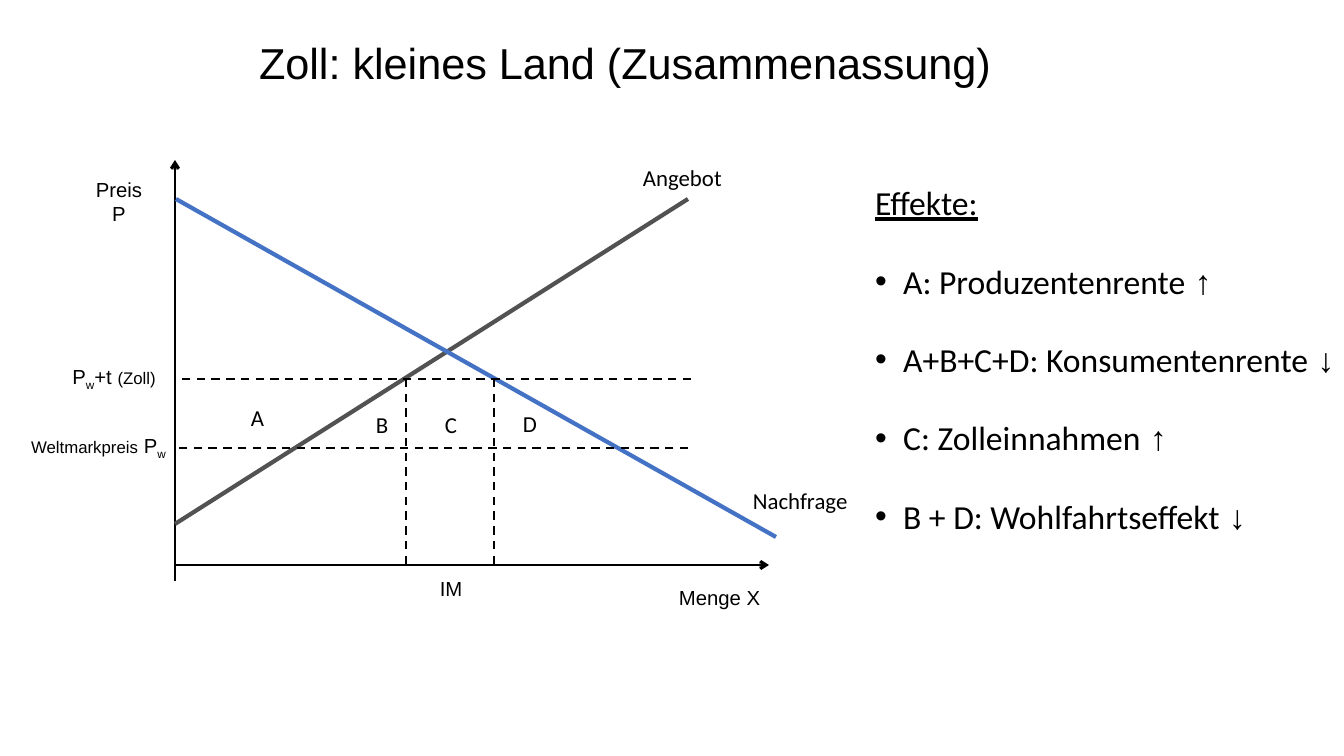
from lxml.etree import SubElement
from pptx import Presentation
from pptx.dml.color import RGBColor
from pptx.enum.dml import MSO_LINE
from pptx.enum.shapes import MSO_CONNECTOR
from pptx.enum.text import MSO_ANCHOR, MSO_AUTO_SIZE, PP_ALIGN
from pptx.oxml.ns import qn
from pptx.util import Pt

PX = 914400 / 100.8
BLACK = RGBColor(0x00, 0x00, 0x00)
GREY = RGBColor(0x52, 0x52, 0x52)
BLUE = RGBColor(0x44, 0x72, 0xC4)
LEFT, CENTER = PP_ALIGN.LEFT, PP_ALIGN.CENTER


def place(box, left, top, width, height):
    bounds = {"left": left, "top": top, "width": width, "height": height}
    for name, value in bounds.items():
        setattr(box, name, round(value * PX))


def add_span(para, text, font, size, **extra):
    span = para.add_run()
    span.text = text
    span.font.color.rgb = BLACK
    for name, value in {"name": font, "size": Pt(size), **extra}.items():
        setattr(span.font, name, value)
    return span


deck = Presentation()
deck.slide_width, deck.slide_height = round(1344 * PX), round(756 * PX)
page = deck.slides.add_slide(deck.slide_layouts[5 - 4])

# Title
title = page.shapes.title
place(title, 214, 27, 822, 71)
title.text_frame.auto_size = MSO_AUTO_SIZE.NONE
title.text_frame.paragraphs[0].alignment = CENTER
add_span(title.text_frame.paragraphs[0], "Zoll: kleines Land (Zusammenassung)", "Arial", 30.9)

# List of effects
effects = page.placeholders[1]
place(effects, 865, 177, 483, 458)
frame_format = {"auto_size": MSO_AUTO_SIZE.NONE, "vertical_anchor": MSO_ANCHOR.TOP,
                "word_wrap": True, "margin_right": 0}
for name, value in frame_format.items():
    setattr(effects.text_frame, name, value)
heading = effects.text_frame.paragraphs[0]
heading.space_before = Pt(0)
heading_format = heading._p.get_or_add_pPr()
heading_format.set("marL", "0")
heading_format.set("indent", "0")
SubElement(heading_format, qn("a:buNone"))
add_span(heading, "Effekte:", "Calibri", 24, underline=True)

for effect, arrow in [("A: Produzentenrente ", "↑"), ("A+B+C+D: Konsumentenrente ", "↓"),
                      ("C: Zolleinnahmen ", "↑"), ("B + D: Wohlfahrtseffekt ", "↓")]:
    para = effects.text_frame.add_paragraph()
    para.space_before = Pt(27.2)
    para_format = para._p.get_or_add_pPr()
    para_format.set("marL", str(round(28 * PX)))
    para_format.set("indent", str(round(-28 * PX)))
    SubElement(para_format, qn("a:buChar"), char="•")
    add_span(para, effect, "Calibri", 24)
    add_span(para, arrow, "Courier New", 24)

# Diagram lines: start x, start y, end x, end y, colour, width, kind
diagram = page.shapes.add_group_shape().shapes
AXIS_X, AXIS_Y = 175, 565
TARIFF_Y, WORLD_Y = 379, 448
lines = [
    (AXIS_X, 581, AXIS_X, 160, BLACK, 2, "arrow"),
    (AXIS_X, AXIS_Y, 769, AXIS_Y, BLACK, 2, "arrow"),
    (AXIS_X, 524, 688, 199, GREY, 3, "solid"),
    (176, 199, 776, 537, BLUE, 3, "solid"),
    (688, WORLD_Y, AXIS_X, WORLD_Y, BLACK, 1.5, "dash"),
    (691, TARIFF_Y, 178, TARIFF_Y, BLACK, 1.5, "dash"),
    (406, TARIFF_Y, 406, AXIS_Y, BLACK, 1.5, "dash"),
    (494, TARIFF_Y, 494, AXIS_Y, BLACK, 1.5, "dash"),
]
for *ends, color, width, kind in lines:
    connector = diagram.add_connector(MSO_CONNECTOR.STRAIGHT, *[round(end * PX) for end in ends])
    connector.line.color.rgb = color
    connector.line.width = Pt(width)
    if kind == "dash":
        connector.line.dash_style = MSO_LINE.DASH
    elif kind == "arrow":
        SubElement(connector.line._get_or_add_ln(), qn("a:tailEnd"), type="arrow")
    SubElement(connector._element.spPr, qn("a:effectLst"))

# Diagram labels: bounds, alignment, font, paragraphs of (text, size, baseline)
labels = [
    (85, 172, 68, 56, CENTER, "Arial", [[("Preis", 14.5, 0)], [("P", 14.5, 0)]]),
    (669, 580, 103, 35, LEFT, "Arial", [[("Menge X", 14.5, 0)]]),
    (430, 571, 43, 35, LEFT, "Arial", [[("IM", 14.5, 0)]]),
    (11, 428, 175, 34, CENTER, "Arial",
     [[("Weltmarkpreis", 12, 0), (" P", 14.5, 0), ("w", 14.5, -25000)]]),
    (60, 359, 108, 34, CENTER, "Arial",
     [[("P", 14.5, 0), ("w", 14.5, -25000), ("+t ", 14.5, 0), ("(Zoll)", 12, 0)]]),
]
for left, top, width, text in [(743, 482, 118, "Nachfrage"), (633, 159, 102, "Angebot"),
                               (241, 399, 34, "A"), (366, 406, 34, "B"),
                               (435, 406, 34, "C"), (513, 405, 35, "D")]:
    labels.append((left, top, width, 36, LEFT, "Calibri", [[(text, 16.3, 0)]]))

for *bounds, alignment, font, paragraphs in labels:
    box = diagram.add_textbox(0, 0, 0, 0)
    place(box, *bounds)
    box.text_frame.word_wrap = False
    for index, spans in enumerate(paragraphs):
        para = box.text_frame.add_paragraph() if index else box.text_frame.paragraphs[0]
        para.alignment = alignment
        for text, size, baseline in spans:
            span = add_span(para, text, font, size)
            if baseline:
                span.font._element.set("baseline", str(baseline))

deck.save("out.pptx")
